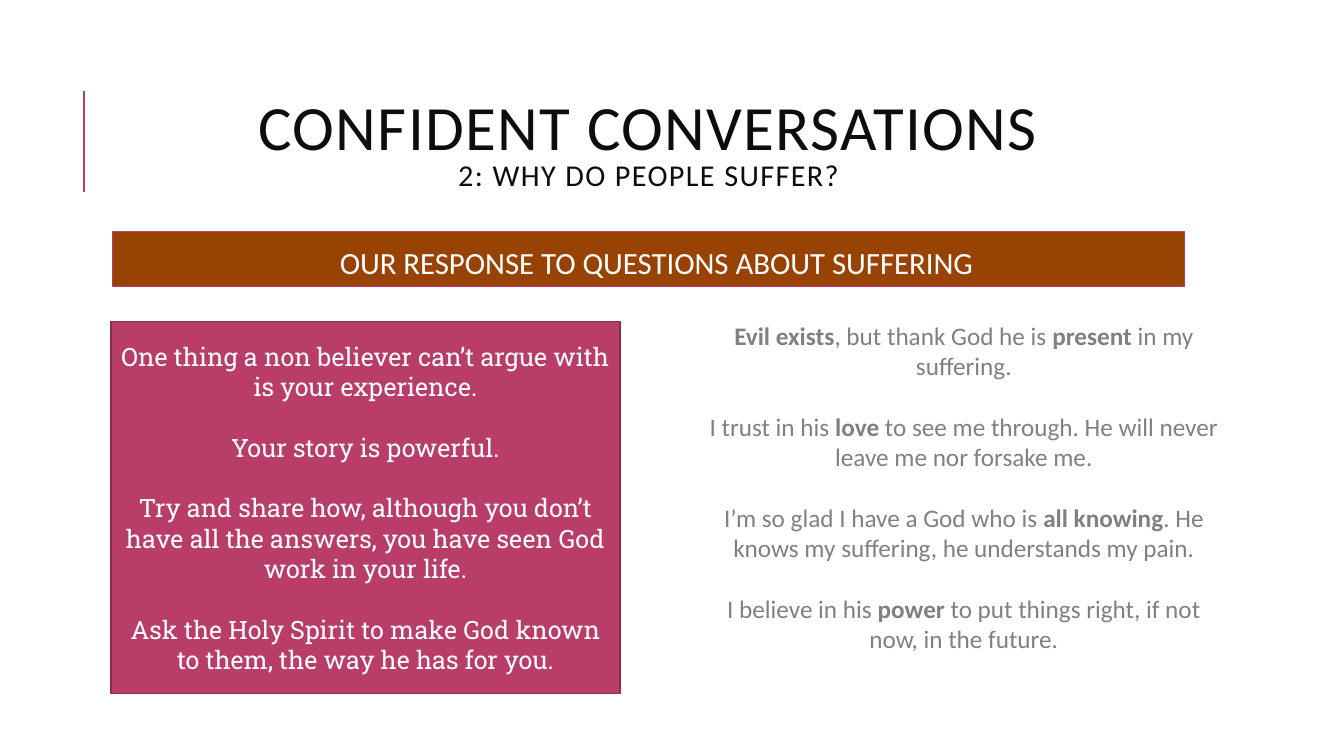
from lxml import etree
from pptx import Presentation
from pptx.dml.color import RGBColor
from pptx.enum.shapes import MSO_CONNECTOR, MSO_SHAPE
from pptx.enum.text import MSO_ANCHOR, MSO_AUTO_SIZE, PP_ALIGN
from pptx.oxml.ns import qn
from pptx.util import Inches, Pt

CENTER = PP_ALIGN.CENTER
TOP, MIDDLE = MSO_ANCHOR.TOP, MSO_ANCHOR.MIDDLE
NO_AUTOFIT = MSO_AUTO_SIZE.NONE
RECTANGLE, STRAIGHT = MSO_SHAPE.RECTANGLE, MSO_CONNECTOR.STRAIGHT
TITLE_ONLY = 5


def rgb(value):
    return RGBColor.from_string(value)


class SlideBuilder:
    SANS, SLAB = "Calibri", "Roboto Slab"
    ROSE, DARK_ROSE, RUST = "B83D68", "882D4D", "984204"
    INK, GREY, WHITE = "0D0D0D", "808080", "FFFFFF"
    BODY_SIZE = 18
    PARAGRAPH_GAP = Pt(21.8)

    def __init__(self, slide):
        self.slide = slide
        slide.background.fill.solid()
        slide.background.fill.fore_color.rgb = rgb(self.WHITE)

    def style(self, paragraph, size, color, font):
        paragraph.alignment = CENTER
        paragraph.font.name = font
        paragraph.font.size = Pt(size)
        paragraph.font.color.rgb = rgb(color)

    def prepare(self, frame, anchor):
        frame.word_wrap = True
        frame.auto_size = NO_AUTOFIT
        frame.vertical_anchor = anchor

    def title(self, box, heading, subheading):
        title = self.slide.shapes.title
        title.left, title.top, title.width, title.height = map(Inches, box)
        self.prepare(title.text_frame, MIDDLE)
        paragraph = title.text_frame.paragraphs[0]
        paragraph.line_spacing = 0.8
        self.style(paragraph, 45, self.INK, self.SANS)
        main = paragraph.add_run()
        main.text = heading
        paragraph.add_line_break()
        sub = paragraph.add_run()
        sub.text = subheading
        sub.font.size = Pt(21.6)
        for run in (main, sub):
            run.font._element.set("spc", "100")

    def accent_line(self, x, top, bottom):
        line = self.slide.shapes.add_connector(
            STRAIGHT, Inches(x), Inches(bottom), Inches(x), Inches(top))
        line.line.color.rgb = rgb(self.ROSE)
        line.line.width = Pt(1.5)
        etree.SubElement(line._element.spPr, qn("a:effectLst"))

    def panel(self, box, fill, outline, width, anchor):
        panel = self.slide.shapes.add_shape(RECTANGLE, *map(Inches, box))
        panel.shadow.inherit = False
        panel.fill.solid()
        panel.fill.fore_color.rgb = rgb(fill)
        panel.line.color.rgb = rgb(outline)
        panel.line.width = Pt(width)
        self.prepare(panel.text_frame, anchor)
        return panel.text_frame

    def banner(self, box, text):
        frame = self.panel(box, self.RUST, self.ROSE, 0.75, TOP)
        frame.margin_left = frame.margin_right = Inches(0.05)
        paragraph = frame.paragraphs[0]
        properties = paragraph._p.get_or_add_pPr()
        properties.set("marL", str(Inches(0.1)))
        properties.set("indent", str(Inches(-0.1)))
        etree.SubElement(properties, qn("a:buChar"), char=" ")
        paragraph.line_spacing = 1.2
        paragraph.space_after = Pt(2)
        self.style(paragraph, 22, self.WHITE, self.SANS)
        paragraph.add_run().text = text

    def text_area(self, box):
        frame = self.slide.shapes.add_textbox(*map(Inches, box)).text_frame
        self.prepare(frame, TOP)
        return frame

    def paragraphs(self, frame, texts, color, font):
        """Write one paragraph per text; parts between asterisks are bold."""
        for index, text in enumerate(texts):
            paragraph = frame.add_paragraph() if index else frame.paragraphs[0]
            if index:
                paragraph.space_before = self.PARAGRAPH_GAP
            self.style(paragraph, self.BODY_SIZE, color, font)
            for position, part in enumerate(text.split("*")):
                if part:
                    run = paragraph.add_run()
                    run.text = part
                    if position % 2:
                        run.font.bold = True


ADVICE = [
    "One thing a non believer can’t argue with is your experience.",
    "Your story is powerful.",
    "Try and share how, although you don’t have all the answers, "
    "you have seen God work in your life.",
    "Ask the Holy Spirit to make God known to them, the way he has for you.",
]
BELIEFS = [
    "*Evil exists*, but thank God he is *present* in my suffering.",
    "I trust in his *love* to see me through. "
    "He will never leave me nor forsake me.",
    "I’m so glad I have a God who is *all knowing*. "
    "He knows my suffering, he understands my pain.",
    "I believe in his *power* to put things right, if not now, in the future.",
]


def main():
    deck = Presentation()
    deck.slide_width, deck.slide_height = Inches(13.33), Inches(7.5)
    page = SlideBuilder(deck.slides.add_slide(deck.slide_layouts[TITLE_ONLY]))

    # Heading
    page.accent_line(0.83, 0.9, 1.9)
    page.title((1.12, 0.64, 10.63, 1.64),
               "CONFIDENT CONVERSATIONS", "2: WHY DO PEOPLE SUFFER?")

    # Advice on the left
    advice = page.panel((1.1, 3.19, 5.05, 3.69),
                        page.ROSE, page.DARK_ROSE, 1.25, MIDDLE)
    page.paragraphs(advice, ADVICE, page.WHITE, page.SLAB)

    # Topic banner
    page.banner((1.12, 2.3, 10.63, 0.54),
                "OUR RESPONSE TO QUESTIONS ABOUT SUFFERING")

    # Beliefs on the right
    beliefs = page.text_area((6.93, 3.13, 5.26, 3.74))
    page.paragraphs(beliefs, BELIEFS, page.GREY, page.SANS)

    deck.save("out.pptx")


if __name__ == "__main__":
    main()
